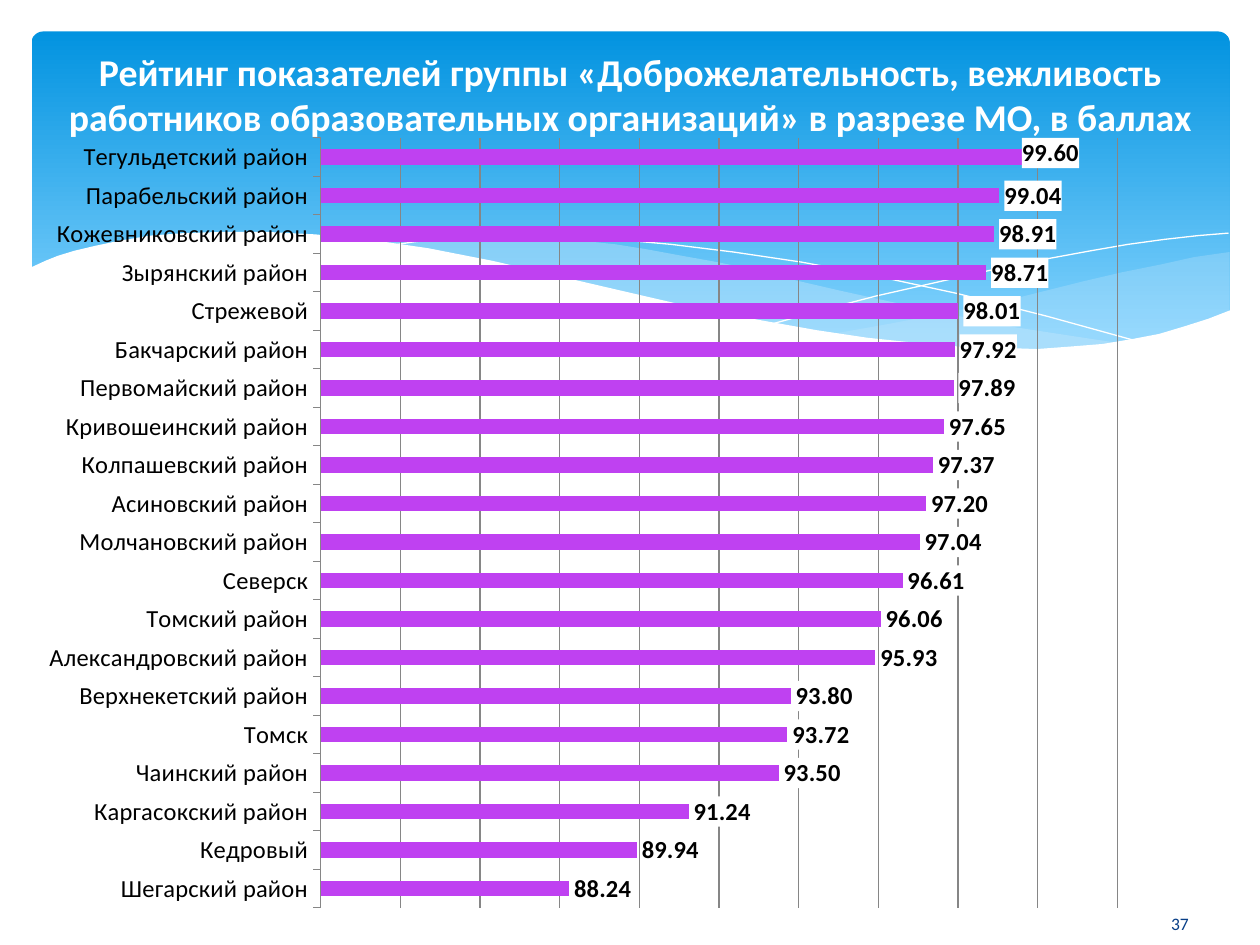
from dataclasses import dataclass

from lxml import etree
from pptx import Presentation
from pptx.chart.data import CategoryChartData
from pptx.dml.color import RGBColor
from pptx.enum.chart import XL_CHART_TYPE, XL_LABEL_POSITION, XL_TICK_LABEL_POSITION, XL_TICK_MARK
from pptx.enum.shapes import MSO_SHAPE
from pptx.enum.text import MSO_ANCHOR, PP_ALIGN
from pptx.oxml import parse_xml
from pptx.oxml.ns import nsdecls, qn
from pptx.util import Inches, Pt

BAR = XL_CHART_TYPE.BAR_CLUSTERED
OUTSIDE_END = XL_LABEL_POSITION.OUTSIDE_END
LABELS_LOW = XL_TICK_LABEL_POSITION.LOW
TICK_OUT = XL_TICK_MARK.OUTSIDE
ROUNDED = MSO_SHAPE.ROUNDED_RECTANGLE
MIDDLE = MSO_ANCHOR.MIDDLE
CENTER = PP_ALIGN.CENTER


@dataclass(frozen=True)
class Theme:
    font: str = "Calibri"
    white: str = "FFFFFF"
    black: str = "000000"
    sky_top: str = "0293E0"
    sky_bottom: str = "83D3FE"
    wave: str = "C6E7FC"
    bar: str = "BF41F1"
    grid: str = "868686"
    page: str = "073E87"
    title_size: float = 21.6
    chart_size: float = 14
    page_size: float = 10


WAVE_RIGHT = [
    (9.76, 2), (9.48, 2.04), (9.21, 2.1), (8.91, 2.16), (8.61, 2.23), (8.05, 2.37), (7.53, 2.48),
    (7.06, 2.57), (6.61, 2.65), (6.91, 2.69), (7.19, 2.72), (7.45, 2.75), (7.69, 2.77), (8.03, 2.78),
    (8.35, 2.77), (8.63, 2.75), (8.89, 2.72), (9.13, 2.67), (9.35, 2.62), (9.49, 2.57), (9.76, 2.47),
]
WAVE_MIDDLE = [
    (8.93, 2.73), (8.66, 2.69), (8.07, 2.6), (7.41, 2.47), (6.68, 2.31), (6.29, 2.22), (5.98, 2.14),
    (5.69, 2.08), (5.41, 2.03), (5.14, 1.98), (4.89, 1.94), (4.42, 1.89), (3.99, 1.86), (3.61, 1.85),
    (3.28, 1.87), (2.86, 1.91), (3.23, 1.96), (3.62, 2.03), (4.04, 2.11), (4.49, 2.22), (5.3, 2.4),
    (5.84, 2.52), (6.34, 2.61), (6.8, 2.68), (7.22, 2.74), (7.61, 2.77), (7.96, 2.78), (8.28, 2.78),
    (8.57, 2.77), (8.93, 2.73),
]
LINE_FALLING = [
    (3.09, 1.95), (3.28, 1.92), (3.53, 1.89), (3.87, 1.87), (4.16, 1.87), (4.5, 1.88), (4.89, 1.9),
    (5.33, 1.94), (5.82, 2), (6.36, 2.08), (6.95, 2.19), (7.6, 2.33), (8.31, 2.51), (9.07, 2.72),
]
LINE_RISING = [
    (6.13, 2.57), (6.53, 2.46), (6.95, 2.35), (7.48, 2.23), (8.06, 2.1), (8.66, 1.99), (8.95, 1.94),
    (9.24, 1.9), (9.51, 1.87), (9.75, 1.85),
]
WHITE_WAVE = [
    (9.77, 2.46), (9.59, 2.53), (9.4, 2.59), (9.2, 2.65), (8.99, 2.69), (8.75, 2.73), (8.5, 2.75),
    (8.23, 2.77), (7.93, 2.76), (7.61, 2.75), (7.26, 2.72), (6.88, 2.68), (6.48, 2.62), (6.03, 2.54),
    (5.55, 2.45), (5.03, 2.33), (4.47, 2.2), (3.91, 2.07), (3.4, 1.97), (2.92, 1.9), (2.5, 1.86),
    (2.11, 1.84), (1.77, 1.84), (1.46, 1.85), (1.19, 1.87), (0.95, 1.91), (0.76, 1.95), (0.59, 1.99),
    (0.46, 2.03), (0.36, 2.07), (0.23, 2.13), (0.23, 3.29), (9.77, 3.29),
]
SCORES = {
    "Тегульдетский район": 99.6, "Парабельский район": 99.04, "Кожевниковский район": 98.91,
    "Зырянский район": 98.71, "Стрежевой": 98.01, "Бакчарский район": 97.92,
    "Первомайский район": 97.89, "Кривошеинский район": 97.65, "Колпашевский район": 97.37,
    "Асиновский район": 97.2, "Молчановский район": 97.04, "Северск": 96.61,
    "Томский район": 96.06, "Александровский район": 95.93, "Верхнекетский район": 93.8,
    "Томск": 93.72, "Чаинский район": 93.5, "Каргасокский район": 91.24,
    "Кедровый": 89.94, "Шегарский район": 88.24,
}


class SlideBuilder:
    def __init__(self, slide, theme):
        self.slide = slide
        self.theme = theme

    def style_font(self, font, size, color, bold=False):
        font.name = self.theme.font
        font.size = Pt(size)
        font.bold = bold
        font.color.rgb = RGBColor.from_string(color)

    def sky(self, box):
        panel = self.slide.shapes.add_shape(ROUNDED, *map(Inches, box))
        panel.shadow.inherit = False
        panel.adjustments[0] = 0.034
        panel.line.fill.background()
        panel.fill.gradient()
        panel.fill.gradient_angle = 270
        stops = ((0, self.theme.sky_top), (0.9, self.theme.sky_bottom))
        for stop, (position, color) in zip(panel.fill.gradient_stops, stops):
            stop.position = position
            stop.color.rgb = RGBColor.from_string(color)

    def outline(self, points, closed):
        start, *rest = [(Inches(x), Inches(y)) for x, y in points]
        builder = self.slide.shapes.build_freeform(*start)
        builder.add_line_segments(rest, close=closed)
        shape = builder.convert_to_shape()
        shape.shadow.inherit = False
        return shape

    def wave(self, points, color, opacity=100):
        shape = self.outline(points, True)
        shape.line.fill.background()
        shape.fill.solid()
        shape.fill.fore_color.rgb = RGBColor.from_string(color)
        if opacity < 100:
            color_element = shape.fill._xPr.find(qn("a:solidFill"))[0]
            etree.SubElement(color_element, qn("a:alpha")).set("val", str(opacity * 1000))

    def curve(self, points):
        shape = self.outline(points, False)
        shape.fill.background()
        shape.line.color.rgb = RGBColor.from_string(self.theme.white)
        shape.line.width = Pt(0)

    def text(self, box, wording, size, color, bold=False):
        frame = self.slide.shapes.add_textbox(*map(Inches, box)).text_frame
        frame.word_wrap = True
        frame.vertical_anchor = MIDDLE
        paragraph = frame.paragraphs[0]
        paragraph.text = wording
        paragraph.alignment = CENTER
        self.style_font(paragraph.font, size, color, bold)

    def bar_chart(self, box, scores, plot, value_range):
        theme = self.theme
        data = CategoryChartData(number_format="0.00")
        data.categories = list(scores)
        data.add_series("Series 1", list(scores.values()))
        chart = self.slide.shapes.add_chart(BAR, *map(Inches, box), data).chart
        chart.has_legend = False
        chart.has_title = False
        self.style_font(chart.font, theme.chart_size, theme.black)

        districts, values = chart.category_axis, chart.value_axis
        districts.reverse_order = True
        districts.major_tick_mark = TICK_OUT
        districts.tick_label_position = LABELS_LOW
        values.minimum_scale, values.maximum_scale = value_range
        values.major_unit = 2
        values.visible = False
        for line in (districts.format.line, values.major_gridlines.format.line):
            line.color.rgb = RGBColor.from_string(theme.grid)
            line.width = Pt(0.75)

        bars = chart.plots[0]
        bars.gap_width = 150
        bars.vary_by_categories = False
        series = bars.series[0]
        series.format.fill.solid()
        series.format.fill.fore_color.rgb = RGBColor.from_string(theme.bar)
        self.value_labels(series.data_labels)
        self.place_plot(chart, plot)

    def value_labels(self, labels):
        labels.show_value = True
        labels.number_format = "0.00"
        labels.number_format_is_linked = False
        labels.position = OUTSIDE_END
        self.style_font(labels.font, self.theme.chart_size, self.theme.black, True)
        root = labels._element
        root.find(qn("c:txPr")).addprevious(parse_xml(
            f'<c:spPr {nsdecls("c", "a")}><a:solidFill><a:srgbClr val="{self.theme.white}"/>'
            "</a:solidFill></c:spPr>"))
        top_label = parse_xml(
            f'<c:dLbl {nsdecls("c")}><c:idx val="0"/><c:layout><c:manualLayout>'
            '<c:x val="-0.004"/><c:y val="-0.005"/></c:manualLayout></c:layout></c:dLbl>')
        for setting in root:
            top_label.append(parse_xml(etree.tostring(setting)))
        root.insert(0, top_label)

    def place_plot(self, chart, plot):
        area = chart._chartSpace.chart.plotArea
        for old in area.findall(qn("c:layout")):
            area.remove(old)
        sides = "".join(f'<c:{side} val="{part}"/>' for side, part in zip("xywh", plot))
        area.insert(0, parse_xml(
            f'<c:layout {nsdecls("c")}><c:manualLayout><c:layoutTarget val="inner"/>'
            f'<c:xMode val="edge"/><c:yMode val="edge"/>{sides}</c:manualLayout></c:layout>'))


def main():
    theme = Theme()
    deck = Presentation()
    deck.slide_width, deck.slide_height = Inches(10), Inches(7.5)
    page = SlideBuilder(deck.slides.add_slide(deck.slide_layouts[6]), theme)

    page.sky((0.25, 0.25, 9.51, 2.7))
    page.wave(WAVE_RIGHT, theme.wave, 29)
    page.wave(WAVE_MIDDLE, theme.wave, 40)
    page.curve(LINE_FALLING)
    page.curve(LINE_RISING)
    page.wave(WHITE_WAVE, theme.white)
    page.text((0.2, 0.26, 9.61, 0.97),
              "Рейтинг показателей группы «Доброжелательность, вежливость "
              "работников образовательных организаций» в разрезе МО, в баллах",
              theme.title_size, theme.white, True)
    page.text((8.73, 7.13, 1.27, 0.4), "37", theme.page_size, theme.page)
    page.bar_chart((0.2, 0.92, 9.61, 6.46), SCORES, (0.244, 0.027, 0.658, 0.946), (82, 102))
    deck.save("out.pptx")


if __name__ == "__main__":
    main()
